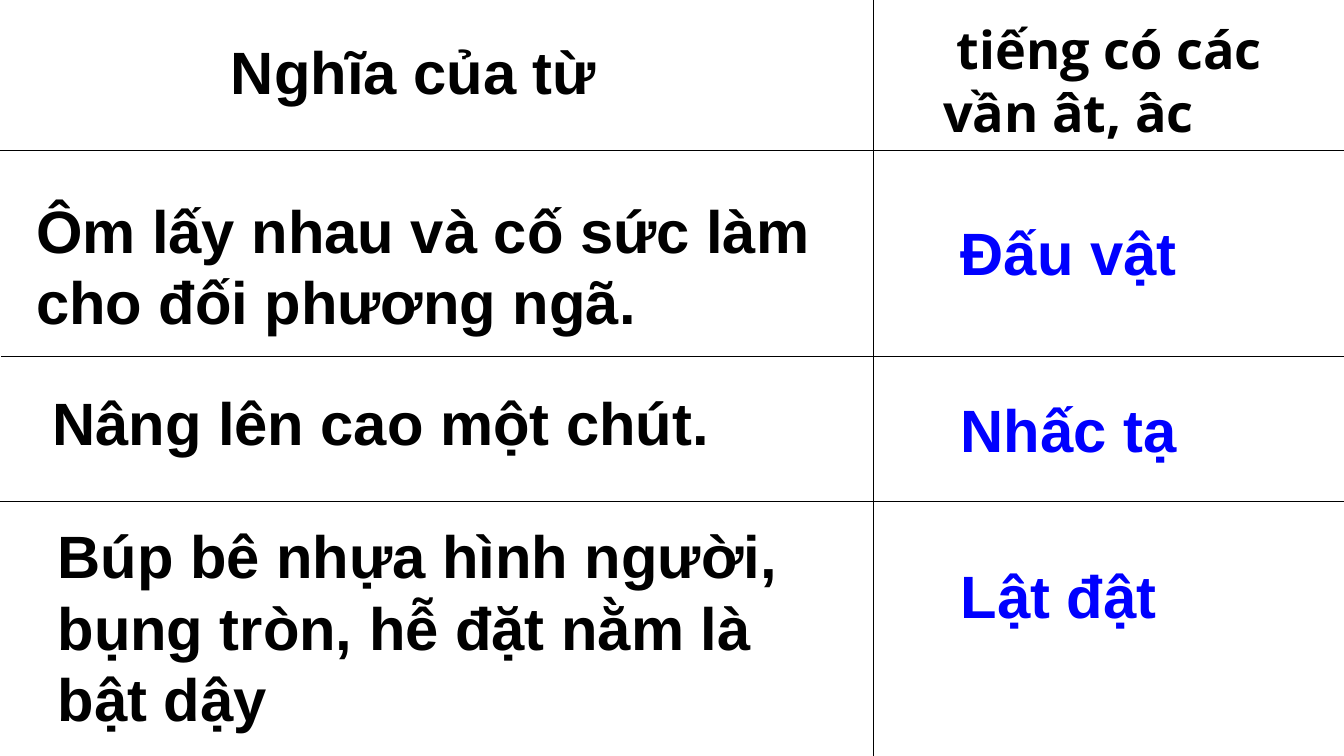
from pptx import Presentation
from pptx.dml.color import RGBColor
from pptx.enum.shapes import MSO_CONNECTOR
from pptx.enum.text import MSO_AUTO_SIZE
from pptx.oxml.ns import qn
from pptx.util import Inches, Pt
from lxml.etree import SubElement

BLACK, BLUE = "000000", "0000FF"
WIDTH = 10
HEIGHT = WIDTH * 9 / 16


def color(value):
    return RGBColor.from_string(value)


prs = Presentation()
prs.slide_width, prs.slide_height = Inches(WIDTH), Inches(HEIGHT)
slide = prs.slides.add_slide(prs.slide_layouts[6])

# Grid: three row rules and one column rule
column_x = 6.5
rules = [(x, y, x + WIDTH, y) for x, y in ((0, 1.12), (0.01, 2.65), (0, 3.73))]
rules.append((column_x, HEIGHT, column_x, 0))
for ends in rules:
    rule = slide.shapes.add_connector(MSO_CONNECTOR.STRAIGHT, *map(Inches, ends))
    rule.line.color.rgb = color(BLACK)
    rule.line.width = Pt(0.5)
    SubElement(rule._element.spPr, qn("a:effectLst"))

# Headings, meanings and answers: text, box, wrap, size, font, colour
answer_x = 7.05
entries = [
    ("Nghĩa của từ", (1.62, 0.21, 3.42, 0.64), True, 32, "Arial", BLACK),
    (" tiếng có các vần ât, âc", (6.92, 0.08, 3.09, 1.04), True, 28, "Open Sans", BLACK),
    ("Ôm lấy nhau và cố sức làm cho đối phương ngã. ", (0.17, 1.39, 6.83, 1.18), True, 32, "Arial", BLACK),
    ("Nâng lên cao một chút.", (0.29, 2.82, 5.13, 0.64), False, 32, "Arial", BLACK),
    ("Búp bê nhựa hình người, bụng tròn, hễ đặt nằm là bật dậy", (0.33, 3.81, 6.01, 1.72), True, 32, "Arial", BLACK),
    ("Đấu vật", (answer_x, 1.56, 1.82, 0.64), False, 32, "Arial", BLUE),
    ("Nhấc tạ", (answer_x, 2.87, 1.82, 0.64), False, 32, "Arial", BLUE),
    ("Lật đật", (answer_x, 4.11, 1.67, 0.64), True, 32, "Arial", BLUE),
]
for words, box, wraps, size, font_name, ink in entries:
    frame = slide.shapes.add_textbox(*map(Inches, box)).text_frame
    frame.word_wrap = wraps
    frame.auto_size = MSO_AUTO_SIZE.SHAPE_TO_FIT_TEXT
    run = frame.paragraphs[0].add_run()
    run.text = words
    run.font.name = font_name
    run.font.size = Pt(size)
    run.font.bold = True
    run.font.color.rgb = color(ink)

prs.save("out.pptx")
